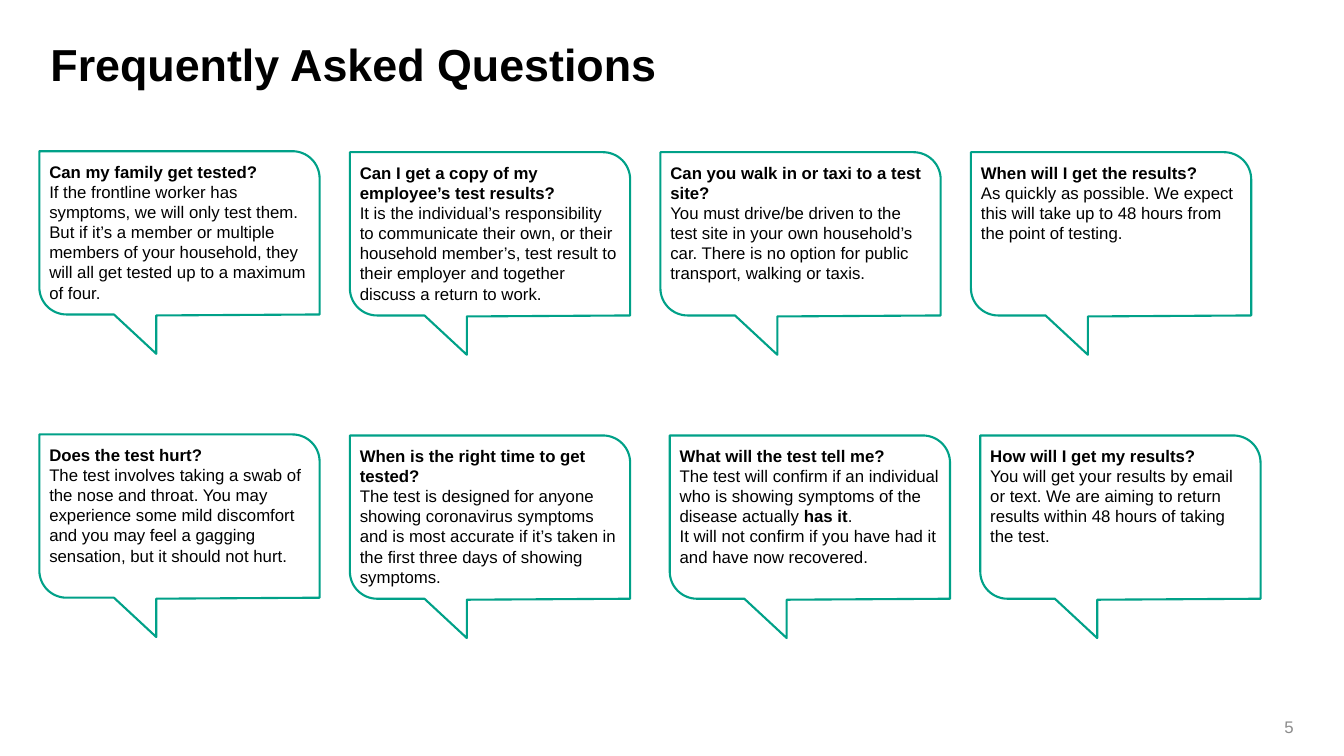
"""Build the slide of frequently asked questions in speech bubbles."""
import math
import pptx
import pptx.dml.color
import pptx.enum.text
import pptx.util

HEX = {"text": "000000", "line": "00A188", "number": "8C8C8C"}
ALIGN = pptx.enum.text.PP_ALIGN
ANCHOR = pptx.enum.text.MSO_ANCHOR
inch = pptx.util.Inches

FAQS = [
    (0, 0, ["*Can my family get tested?*",
            "If the frontline worker has symptoms, we will only test them.",
            "But if it’s a member or multiple members of your household, they "
            "will all get tested up to a maximum of four."]),
    (1, 0, ["*Can I get a copy of my employee’s test results?*",
            "It is the individual’s responsibility to communicate their own, or "
            "their household member’s, test result to their employer and "
            "together discuss a return to work."]),
    (2, 0, ["*Can you walk in or taxi to a test site?*",
            "You must drive/be driven to the test site in your own household’s "
            "car. There is no option for public transport, walking or taxis."]),
    (3, 0, ["*When will I get the results?*",
            "As quickly as possible. We expect this will take up to 48 hours "
            "from the point of testing."]),
    (0, 1, ["*Does the test hurt?*",
            "The test involves taking a swab of the nose and throat. You may "
            "experience some mild discomfort and you may feel a gagging "
            "sensation, but it should not hurt."]),
    (1, 1, ["*When is the right time to get tested?*",
            "The test is designed for anyone showing coronavirus symptoms and "
            "is most accurate if it’s taken in the first three days of showing "
            "symptoms."]),
    (2.03, 1, ["*What will the test tell me?*",
               "The test will confirm if an individual who is showing symptoms "
               "of the disease actually *has it*.",
               "It will not confirm if you have had it and have now recovered."]),
    (3.03, 1, ["*How will I get my results?*",
               "You will get your results by email or text. We are aiming to "
               "return results within 48 hours of taking the test."]),
]


def color(name):
    return pptx.dml.color.RGBColor.from_string(HEX[name])


def write(frame, lines, size=12, tone="text", align=ALIGN.LEFT,
          anchor=ANCHOR.TOP, pad=0.1, space=1.0):
    """Fill a frame with lines, where *stars* enclose bold words."""
    frame.word_wrap = True
    frame.auto_size = pptx.enum.text.MSO_AUTO_SIZE.NONE
    frame.vertical_anchor = anchor
    frame.margin_left = frame.margin_right = inch(0.1)
    frame.margin_top = frame.margin_bottom = inch(pad)
    for index, line in enumerate(lines):
        para = frame.paragraphs[0] if index == 0 else frame.add_paragraph()
        para.alignment = align
        para.line_spacing = space
        para.space_before = pptx.util.Pt(0)
        for part, words in enumerate(line.split("*")):
            if words:
                run = para.add_run()
                run.text = words
                run.font.name = "Arial"
                run.font.size = pptx.util.Pt(size)
                run.font.bold = part % 2 == 1
                run.font.color.rgb = color(tone)


def arc(x, y, radius, start, end, steps=16):
    """List points along an arc, with angles in degrees."""
    turns = [math.radians(start + (end - start) * i / steps)
             for i in range(steps + 1)]
    return [(x + radius * math.cos(t), y + radius * math.sin(t)) for t in turns]


class Deck:
    """Hold the grid, the style and the current slide."""

    left, top = 0.39, 1.5
    col, row = 3.08, 2.81
    wide, high, tail = 2.78, 1.62, 2.01
    curve = 0.27

    def __init__(self):
        self.file = pptx.Presentation()
        self.file.slide_width = inch(13.33)
        self.file.slide_height = inch(7.5)
        self.slide = self.file.slides.add_slide(self.file.slide_layouts[5])

    def place(self, x, y, w, h):
        """Turn shares of the slide into lengths."""
        width, height = self.file.slide_width, self.file.slide_height
        return [int(v) for v in (x * width, y * height, w * width, h * height)]

    def title(self, words, *area):
        shape = self.slide.shapes.title
        shape.left, shape.top, shape.width, shape.height = self.place(*area)
        write(shape.text_frame, [f"*{words}*"], size=32, pad=0.05, space=0.9)

    def number(self, words, *area):
        box = self.slide.shapes.add_textbox(*self.place(*area))
        write(box.text_frame, [words], tone="number", align=ALIGN.RIGHT,
              anchor=ANCHOR.BOTTOM, pad=0.04)

    def bubble(self, col, row, lines):
        dip = 0.01 if col else 0
        left = self.left + col * self.col
        top = self.top + row * self.row + dip
        dots = [(0, 0)]
        dots += arc(self.curve, self.high - self.curve, self.curve, 180, 90)
        dots += [(0.74, self.high), (1.16, self.tail), (1.16, self.high + 0.01),
                 (self.wide, self.high)]
        dots += arc(self.wide - self.curve, self.curve, self.curve, 0, -90)
        dots = [(inch(x), inch(y)) for x, y in dots]
        path = self.slide.shapes.build_freeform(*dots[0])
        path.add_line_segments(dots[1:], close=True)
        shape = path.convert_to_shape(inch(left), inch(top))
        shape.shadow.inherit = False
        shape.fill.background()
        shape.line.color.rgb = color("line")
        shape.line.width = pptx.util.Pt(1.5)
        write(shape.text_frame, lines)


def main():
    deck = Deck()
    deck.title("Frequently Asked Questions", 0.03, 0.05, 0.94, 0.12)
    for faq in FAQS:
        deck.bubble(*faq)
    deck.number("5", 0.91, 0.93, 0.06, 0.05)
    deck.file.save("out.pptx")


if __name__ == "__main__":
    main()
